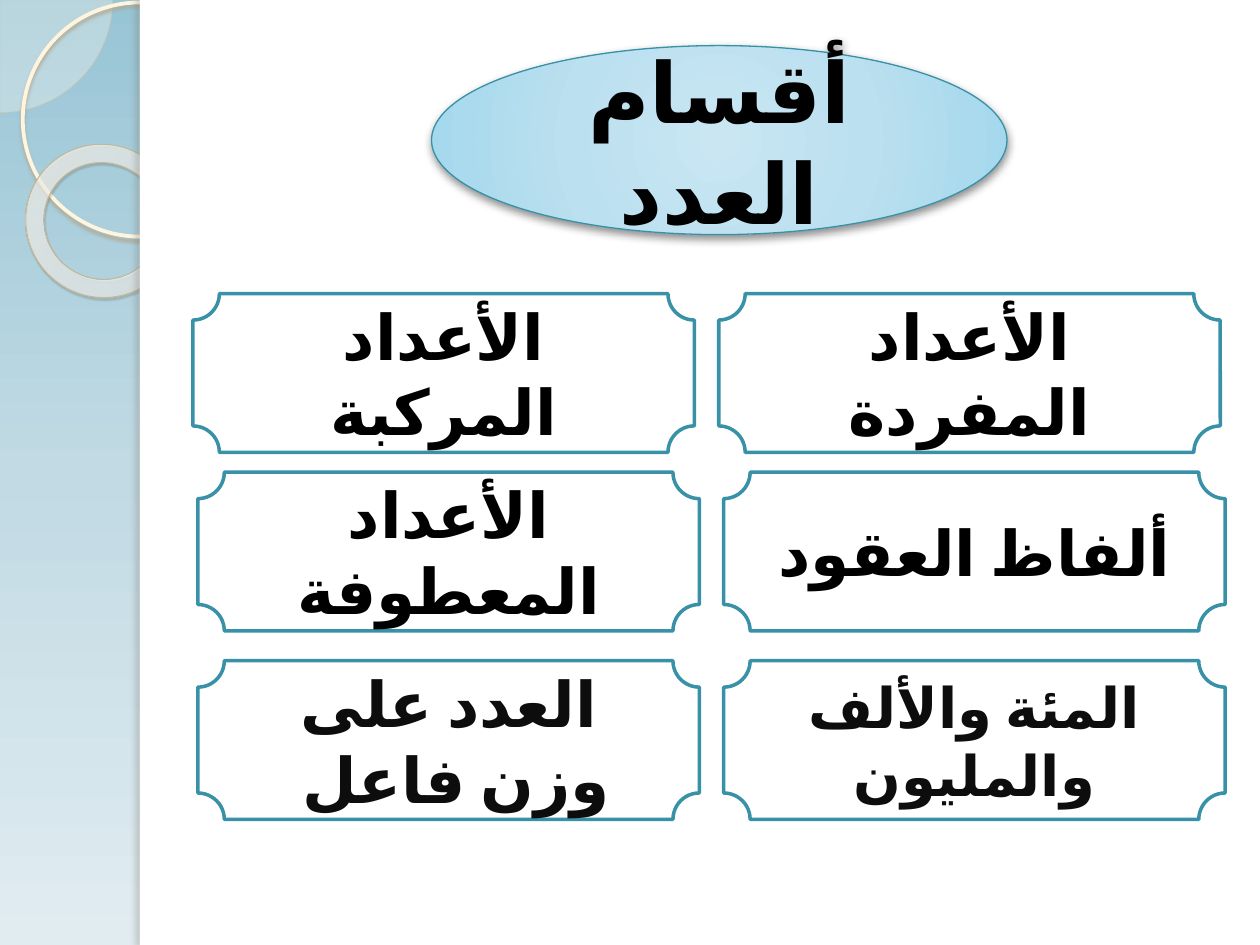
from dataclasses import dataclass, field

from pptx import Presentation
from pptx.dml.color import RGBColor
from pptx.enum.lang import MSO_LANGUAGE_ID
from pptx.enum.shapes import MSO_SHAPE
from pptx.enum.text import MSO_ANCHOR, PP_ALIGN
from pptx.oxml import parse_xml
from pptx.oxml.ns import nsdecls, qn
from pptx.util import Cm, Pt


@dataclass(frozen=True)
class Theme:
    font: str = "Calibri"
    title_size: int = 48
    card_size: int = 36
    small_card_size: int = 32
    black: str = "000000"
    soft_black: str = "0D0D0D"
    white: str = "FFFFFF"
    teal: str = "3891A7"
    cream: str = "FEFAF4"
    cream_line: str = "FFF5DE"
    sand: str = "D3C39F"
    donut_line: str = "C7B893"
    # Gradient stops: position, colour, opacity
    sky: tuple = ((0, "98C5D6", 100), (50, "C1DAE4", 100), (100, "E1ECF1", 100))
    title_glow: tuple = ((0, "C9E6F2", 100), (50, "BBE0EF", 100),
                         (97, "A4D8ED", 100), (100, "9BD7EE", 100))
    donut_glow: tuple = ((0, "FFFCF6", 70), (70, "FFFEFB", 55), (100, "F0D28E", 60))
    # Shadows: colour, opacity, blur, distance, direction
    ring_shadow: tuple = ("B0A68F", 85, 2, 2, 90)
    donut_shadow: tuple = ("5A5444", 35, 1, 1.2, 75)
    edge_shadow: tuple = ("736F63", 25, 3, 3, 180)
    title_shadow: tuple = ("000000", 43, 5, 2, 90)


def color_xml(color, opacity):
    return f'<a:srgbClr val="{color}"><a:alpha val="{opacity * 1000}"/></a:srgbClr>'


def set_gradient(fill, owner, stops, focus=None):
    """Fill with a vertical gradient, or a circular one around a focus rectangle."""
    fill.gradient()
    stop_xml = "".join(f'<a:gs pos="{position * 1000}">{color_xml(color, opacity)}</a:gs>'
                       for position, color, opacity in stops)
    if focus:
        sides = " ".join(f'{side}="{value * 1000}"' for side, value in zip("ltrb", focus))
        direction = f'<a:path path="circle"><a:fillToRect {sides}/></a:path>'
    else:
        direction = '<a:lin ang="5400000" scaled="0"/>'
    old = owner.find(f".//{qn('a:gradFill')}")
    old.getparent().replace(old, parse_xml(
        f'<a:gradFill {nsdecls("a")} rotWithShape="1"><a:gsLst>{stop_xml}</a:gsLst>'
        f'{direction}</a:gradFill>'))


def set_shadow(shape, color, opacity, blur, distance, direction):
    effects = shape.element.spPr.find(qn("a:effectLst"))
    effects.append(parse_xml(
        f'<a:outerShdw {nsdecls("a")} blurRad="{Pt(blur)}" dist="{Pt(distance)}" '
        f'dir="{direction * 60000}" algn="ctr" rotWithShape="0">'
        f'{color_xml(color, opacity)}</a:outerShdw>'))


def write_text(shape, text, *, size, color, font):
    """Write centred bold right-to-left text in the middle of a shape."""
    frame = shape.text_frame
    frame.word_wrap = True
    frame.vertical_anchor = MSO_ANCHOR.MIDDLE
    para = frame.paragraphs[0]
    para.alignment = PP_ALIGN.CENTER
    para._p.get_or_add_pPr().set("rtl", "1")
    span = para.add_run()
    span.text = text
    span.font.name = font
    span.font.size = Pt(size)
    span.font.bold = True
    span.font.language_id = MSO_LANGUAGE_ID.ARABIC
    span.font.color.rgb = RGBColor.from_string(color)
    span.font._element.append(parse_xml(f'<a:cs {nsdecls("a")} typeface="{font}"/>'))


@dataclass
class SlideBuilder:
    slide: object
    theme: Theme = field(default_factory=Theme)

    def background(self):
        set_gradient(self.slide.background.fill, self.slide.element, self.theme.sky)

    def shape(self, kind, left, top, width, height, *, fill=None, opacity=100, glow=None,
              focus=None, line=None, weight=1, shadow=None, adjust=(), rotation=0):
        shape = self.slide.shapes.add_shape(kind, Cm(left), Cm(top), Cm(width), Cm(height))
        shape.rotation = rotation
        for index, value in enumerate(adjust):
            shape.adjustments[index] = value
        if glow:
            set_gradient(shape.fill, shape.element.spPr, glow, focus)
        elif fill:
            shape.fill.solid()
            shape.fill.fore_color.rgb = RGBColor.from_string(fill)
            if opacity < 100:
                solid = shape.element.spPr.find(qn("a:solidFill"))
                solid.replace(solid[0], parse_xml(color_xml(fill, opacity).replace(
                    "<a:srgbClr", f'<a:srgbClr {nsdecls("a")}', 1)))
        else:
            shape.fill.background()
        if line:
            shape.line.color.rgb = RGBColor.from_string(line)
            shape.line.width = Pt(weight)
        else:
            shape.line.fill.background()
        shape.shadow.inherit = False
        if shadow:
            set_shadow(shape, *shadow)
        return shape

    def side_band(self):
        theme = self.theme
        self.shape(MSO_SHAPE.PIE, -2.27, -2.27, 4.54, 4.54, fill=theme.cream, opacity=33,
                   line=theme.sand, weight=0.25, adjust=(0, 54.02))
        self.shape(MSO_SHAPE.OVAL, 0.46, 0.05, 4.72, 4.72, line=theme.cream_line,
                   weight=2.15, shadow=theme.ring_shadow)
        self.shape(MSO_SHAPE.DONUT, 0.51, 2.92, 3.12, 3.07, glow=theme.donut_glow,
                   focus=(-408, -50, 508, 150), line=theme.donut_line, weight=0.58,
                   shadow=theme.donut_shadow, adjust=(0.12,), rotation=38.6)
        self.shape(MSO_SHAPE.RECTANGLE, 2.82, 0, 22.58, 19.05, fill=theme.white)
        self.shape(MSO_SHAPE.RECTANGLE, 2.82, 0, 0.2, 19.05, fill=theme.white,
                   shadow=theme.edge_shadow)

    def title(self, text):
        theme = self.theme
        oval = self.shape(MSO_SHAPE.OVAL, 8.7, 0.92, 11.6, 3.81, glow=theme.title_glow,
                          focus=(50, 50, 50, 50), line=theme.teal, weight=0.75,
                          shadow=theme.title_shadow)
        write_text(oval, text, size=theme.title_size, color=theme.black, font=theme.font)

    def card(self, left, top, text, size, color):
        plaque = self.shape(MSO_SHAPE.PLAQUE, left, top, 10.11, 3.2,
                            fill=self.theme.white, line=self.theme.teal, weight=2)
        write_text(plaque, text, size=size, color=color, font=self.theme.font)


def main():
    deck = Presentation()
    deck.slide_width, deck.slide_height = Cm(25.4), Cm(19.05)
    builder = SlideBuilder(deck.slides.add_slide(deck.slide_layouts[6]))
    theme = builder.theme
    builder.background()
    builder.side_band()
    builder.title("أقسام العدد")

    column_step = 10.6
    normal, small = theme.card_size, theme.small_card_size
    rows = (
        (3.89, 5.92, theme.black, (("الأعداد المركبة", normal), ("الأعداد المفردة", normal))),
        (3.99, 9.52, theme.black, (("الأعداد المعطوفة", normal), ("ألفاظ العقود", normal))),
        (3.99, 13.32, theme.soft_black,
         (("العدد على وزن فاعل ", normal), ("المئة والألف والمليون", small))),
    )
    for left, top, color, cards in rows:
        for column, (text, size) in enumerate(cards):
            builder.card(left + column * column_step, top, text, size, color)
    deck.save("out.pptx")


if __name__ == "__main__":
    main()
